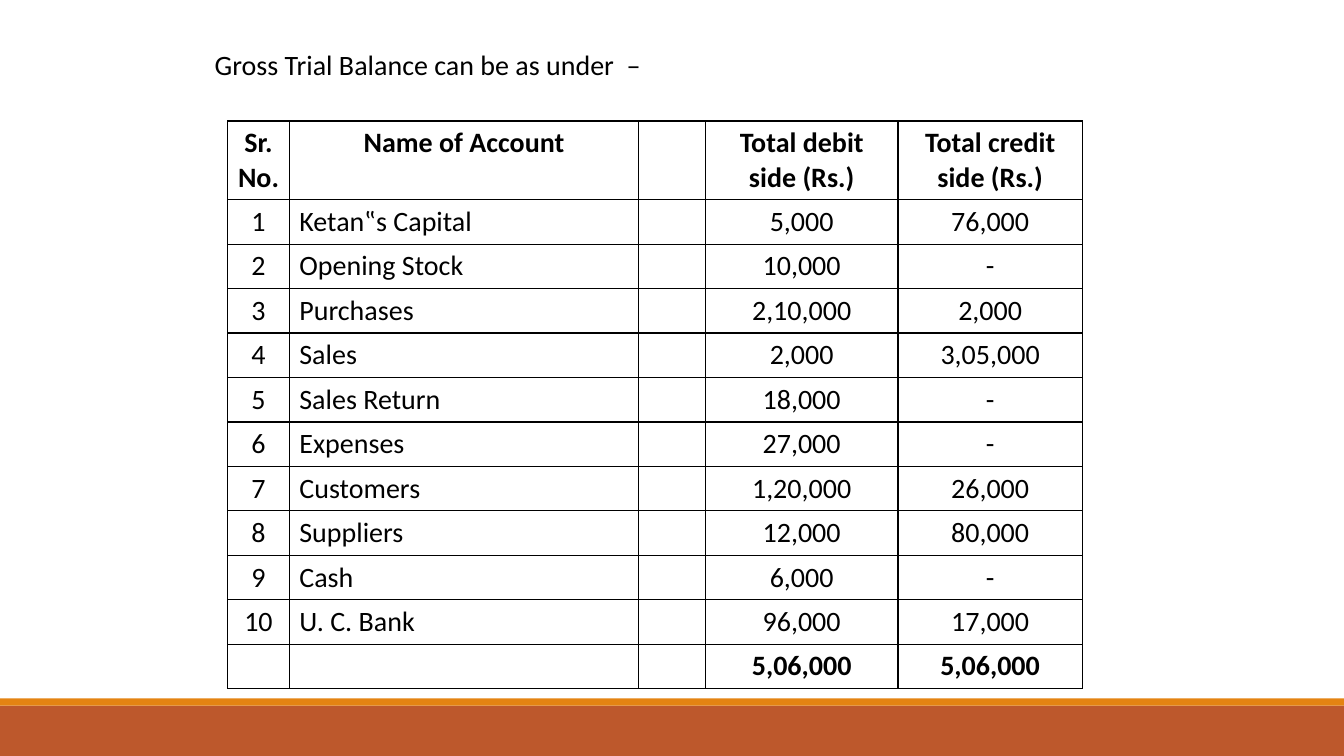
import pptx
import pptx.util
import pptx.dml.color
import pptx.enum.shapes
import pptx.enum.text
import pptx.oxml
import pptx.oxml.ns

Cm = pptx.util.Cm
CENTER = pptx.enum.text.PP_ALIGN.CENTER
LEFT = pptx.enum.text.PP_ALIGN.LEFT

HEADINGS = ["Sr.\nNo.", "Name of Account", "", "Total debit side (Rs.)", "Total credit side (Rs.)"]
ACCOUNTS = [
    ("Ketan‟s Capital", "5,000", "76,000"),
    ("Opening Stock", "10,000", "-"),
    ("Purchases", "2,10,000", "2,000"),
    ("Sales", "2,000", "3,05,000"),
    ("Sales Return", "18,000", "-"),
    ("Expenses", "27,000", "-"),
    ("Customers", "1,20,000", "26,000"),
    ("Suppliers", "12,000", "80,000"),
    ("Cash", "6,000", "-"),
    ("U. C. Bank", "96,000", "17,000"),
]
TOTALS = ["", "", "", "5,06,000", "5,06,000"]
COLUMN_WIDTHS = [1.55, 8.81, 1.68, 4.85, 4.65]
HEADER_HEIGHT, ROW_HEIGHT = 1.96, 1.12


def rgb(value):
    return pptx.dml.color.RGBColor.from_string(value)


class SlideBuilder:
    ink = "000000"
    font = {"name": "Calibri", "size": pptx.util.Pt(20)}

    def __init__(self, s):
        self.s = s

    def fill_text(self, tf, text, align=LEFT, bold=False):
        for i, line in enumerate(text.split("\n")):
            p = tf.paragraphs[0] if i == 0 else tf.add_paragraph()
            p.alignment = align
            targets = [p.font]
            if line:
                r = p.add_run()
                r.text = line
                r.font.color.rgb = rgb(self.ink)
                targets.append(r.font)
            for font in targets:
                for key, value in {**self.font, "bold": bold}.items():
                    setattr(font, key, value)

    def band(self, x, y, w, h, color):
        sp = self.s.shapes.add_shape(
            pptx.enum.shapes.MSO_SHAPE.RECTANGLE, Cm(x), Cm(y), Cm(w), Cm(h))
        sp.shadow.inherit = False
        sp.fill.solid()
        sp.fill.fore_color.rgb = rgb(color)
        sp.line.fill.background()

    def text(self, x, y, w, h, text):
        tf = self.s.shapes.add_textbox(Cm(x), Cm(y), Cm(w), Cm(h)).text_frame
        tf.word_wrap = True
        self.fill_text(tf, text)

    def border(self, cell):
        tcPr = cell._tc.get_or_add_tcPr()
        for i, side in enumerate(("lnL", "lnR", "lnT", "lnB")):
            tcPr.insert(i, pptx.oxml.parse_xml(
                f'<a:{side} {pptx.oxml.ns.nsdecls("a")} w="12700"><a:solidFill>'
                f'<a:srgbClr val="{self.ink}"/></a:solidFill></a:{side}>'))

    def table(self, x, y, widths, heights, rows):
        tbl = self.s.shapes.add_table(
            len(rows), len(widths), Cm(x), Cm(y), Cm(sum(widths)), Cm(sum(heights))).table
        for column, width in zip(tbl.columns, widths):
            column.width = Cm(width)
        for row, height in zip(tbl.rows, heights):
            row.height = Cm(height)
        for i, values in enumerate(rows):
            bold = i in (0, len(rows) - 1)
            for j, value in enumerate(values):
                cell = tbl.cell(i, j)
                cell.fill.background()
                self.border(cell)
                align = LEFT if j == 1 and not bold else CENTER
                self.fill_text(cell.text_frame, value, align, bold)


def main():
    prs = pptx.Presentation()
    prs.slide_width, prs.slide_height = Cm(33.87), Cm(19.05)
    b = SlideBuilder(prs.slides.add_slide(prs.slide_layouts[6]))
    b.band(0, 17.78, 33.87, 1.27, "BD582C")
    b.band(0, 17.6, 33.87, 0.18, "E48312")
    entries = [[str(n), name, "", debit, credit]
               for n, (name, debit, credit) in enumerate(ACCOUNTS, 1)]
    rows = [HEADINGS, *entries, TOTALS]
    heights = [HEADER_HEIGHT] + [ROW_HEIGHT] * (len(rows) - 1)
    b.table(5.74, 3.05, COLUMN_WIDTHS, heights, rows)
    b.text(5.16, 1.07, 22.35, 1.12, "Gross Trial Balance can be as under  –")
    prs.save("out.pptx")


if __name__ == "__main__":
    main()
